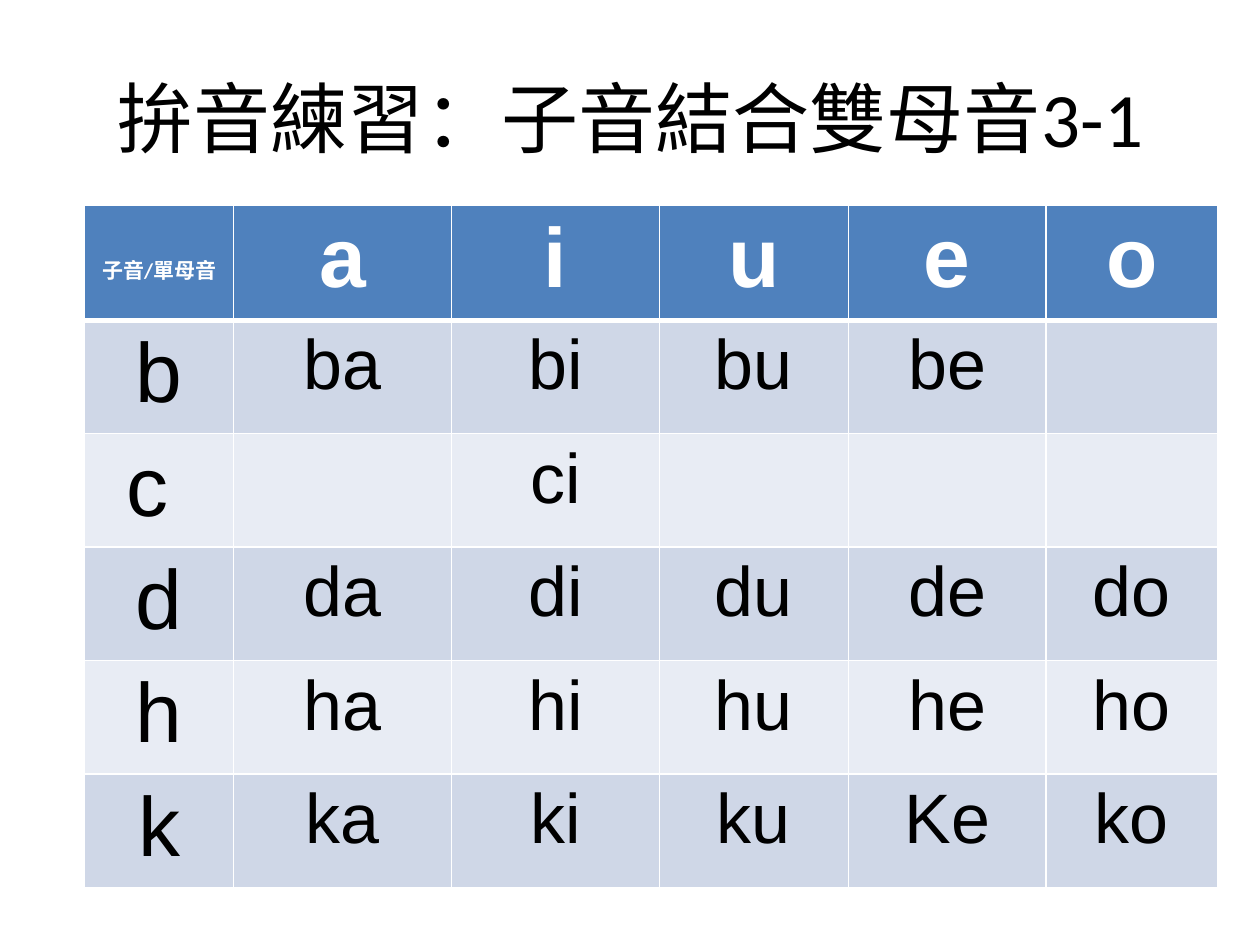
from dataclasses import dataclass

from lxml import etree
from pptx import Presentation
from pptx.dml.color import RGBColor
from pptx.enum.text import MSO_ANCHOR, PP_ALIGN
from pptx.oxml.ns import qn
from pptx.util import Pt

CENTER = PP_ALIGN.CENTER
MIDDLE = MSO_ANCHOR.MIDDLE

TITLE = "拚音練習：子音結合雙母音3-1"
ROWS = [
    ["子音/單母音", "a", "i", "u", "e", "o"],
    ["b", "ba", "bi", "bu", "be", ""],
    ["c ", "", "ci", "", "", ""],
    ["d", "da", "di", "du", "de", "do"],
    ["h", "ha", "hi", "hu", "he", "ho"],
    ["k", "ka", "ki", "ku", "Ke", "ko"],
]
COLUMN_WIDTHS = [85, 124.6, 118.8, 108, 113, 98]
HEADER_HEIGHT = 66
ROW_HEIGHT = 62.4


def color(hex_string):
    return RGBColor.from_string(hex_string)


@dataclass
class SlideBuilder:
    page: object
    title_font: str = "Calibri"
    letter_font: str = "Arial"
    ink: str = "000000"
    white: str = "FFFFFF"
    header_fill: str = "4F81BD"
    bands: tuple = ("CFD7E7", "E8ECF4")

    def set_text(self, frame, text, font, size, hex_string, bold=False):
        para = frame.paragraphs[0]
        para.text = text
        para.alignment = CENTER
        para.font.name = font
        para.font.size = Pt(size)
        para.font.bold = bold
        para.font.color.rgb = color(hex_string)

    def title(self, text, left, top, width, height):
        box = self.page.shapes.add_textbox(Pt(left), Pt(top), Pt(width), Pt(height))
        frame = box.text_frame
        frame.word_wrap = True
        frame.vertical_anchor = MIDDLE
        self.set_text(frame, text, self.title_font, 44, self.ink)

    def border(self, cell, side, width):
        properties = cell._tc.get_or_add_tcPr()
        line = etree.SubElement(properties, qn(f"a:{side}"), w=str(Pt(width)))
        fill = etree.SubElement(line, qn("a:solidFill"))
        etree.SubElement(fill, qn("a:srgbClr"), val=self.white)

    def cell(self, cell, text, row, column):
        header = row == 0
        corner = header and column == 0
        self.border(cell, "lnL", 1)
        self.border(cell, "lnR", 1)
        self.border(cell, "lnT", 3 if row == 1 else 1)
        self.border(cell, "lnB", 3 if header else 1)
        cell.fill.solid()
        cell.fill.fore_color.rgb = color(self.header_fill if header else self.bands[(row - 1) % 2])
        if corner:
            cell.margin_top = Pt(28)
        font = self.title_font if corner else self.letter_font
        size = 12 if corner else 48 if header or column == 0 else 40
        ink = self.white if header else self.ink
        self.set_text(cell.text_frame, text, font, size, ink, header)

    def syllable_table(self, rows, left, top):
        heights = [HEADER_HEIGHT] + [ROW_HEIGHT] * (len(rows) - 1)
        table = self.page.shapes.add_table(
            len(rows), len(COLUMN_WIDTHS), Pt(left), Pt(top),
            Pt(sum(COLUMN_WIDTHS)), Pt(sum(heights)),
        ).table
        for column, width in zip(table.columns, COLUMN_WIDTHS):
            column.width = Pt(width)
        for row, (texts, height) in enumerate(zip(rows, heights)):
            table.rows[row].height = Pt(height)
            for column, text in enumerate(texts):
                self.cell(table.cell(row, column), text, row, column)


def main():
    deck = Presentation()
    deck.slide_width = Pt(720)
    deck.slide_height = Pt(540)
    builder = SlideBuilder(deck.slides.add_slide(deck.slide_layouts[6]))
    builder.title(TITLE, 36, 21.6, 648, 90)
    builder.syllable_table(ROWS, 48.4, 117)
    deck.save("out.pptx")


if __name__ == "__main__":
    main()
